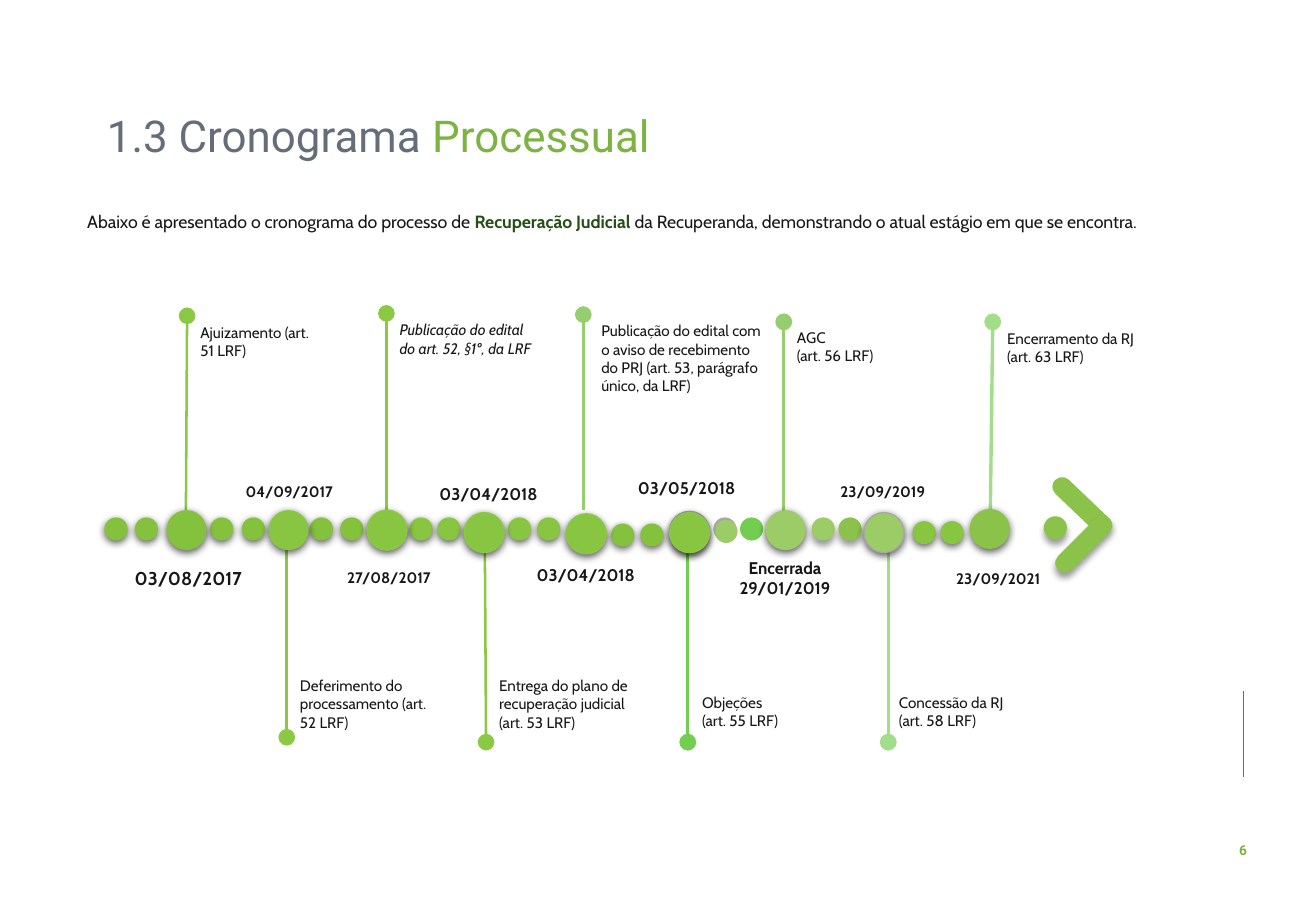
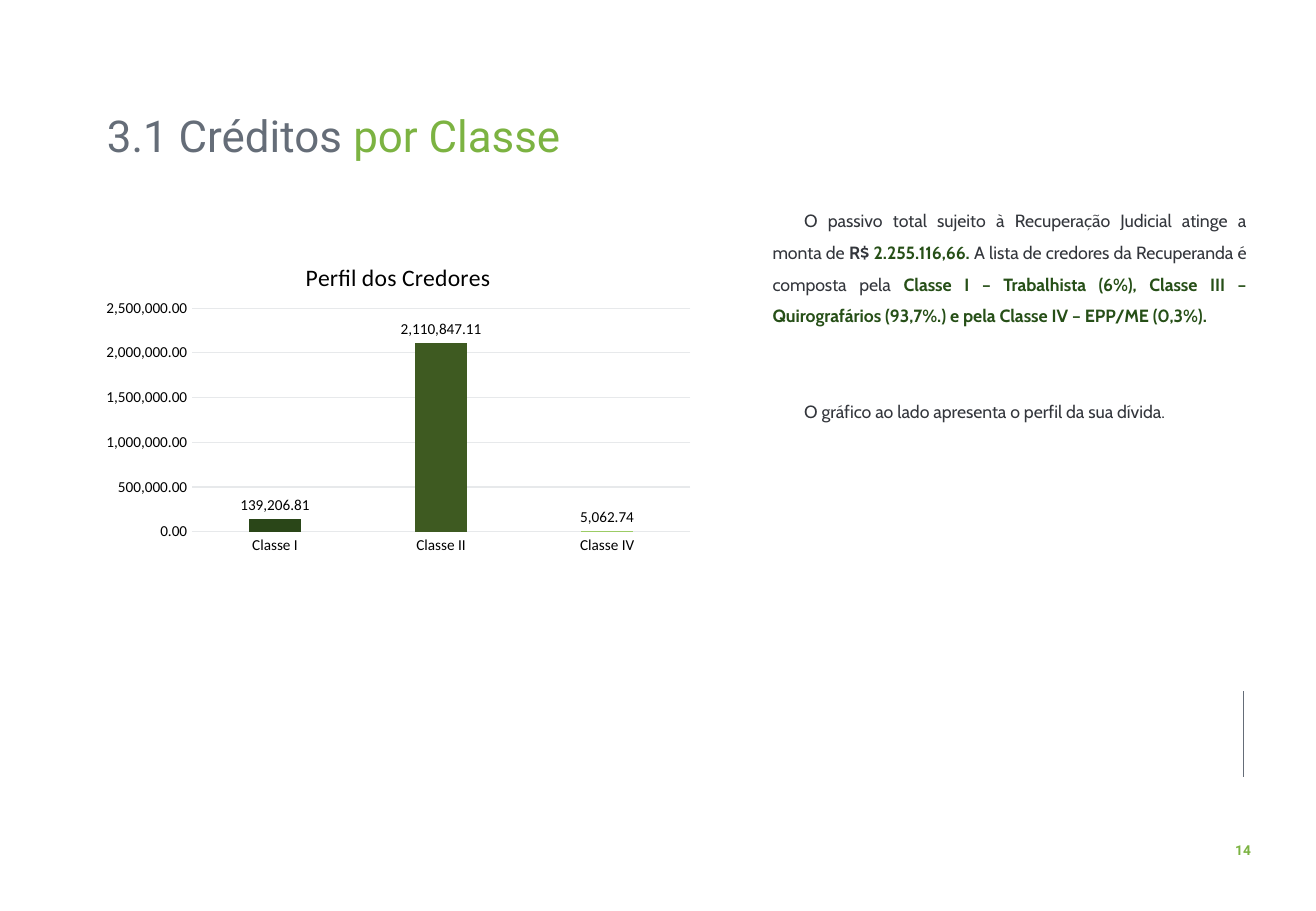
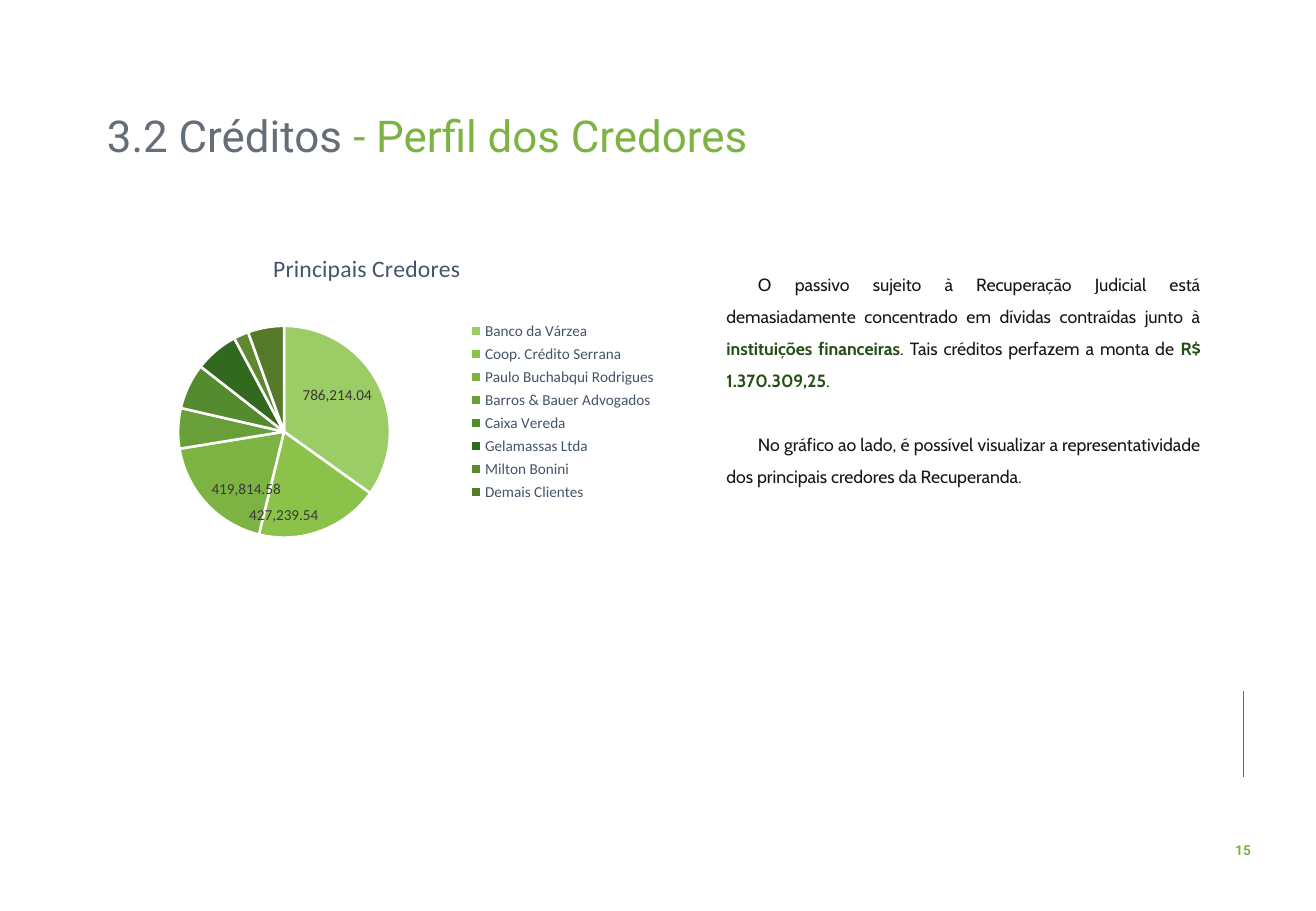
from dataclasses import dataclass

from lxml.etree import SubElement
from pptx import Presentation
from pptx.chart.data import CategoryChartData
from pptx.dml.color import RGBColor
from pptx.enum.chart import XL_CHART_TYPE, XL_LABEL_POSITION, XL_LEGEND_POSITION, XL_TICK_MARK
from pptx.enum.shapes import MSO_CONNECTOR, MSO_SHAPE
from pptx.enum.text import MSO_ANCHOR, MSO_AUTO_SIZE, PP_ALIGN
from pptx.oxml import parse_xml
from pptx.oxml.ns import nsdecls, qn
from pptx.util import Emu, Pt

PX = 9144  # 100 px to the inch


@dataclass(frozen=True)
class Theme:
    # colours
    slate: str = "656D78"
    green: str = "7CB342"
    forest: str = "264F17"
    ink: str = "181717"
    graphite: str = "33363C"
    grid: str = "E7E9EB"
    grey: str = "A7A7A7"
    leaf: str = "84C23D"
    lime: str = "88C641"
    rim: str = "8BC944"
    apple: str = "8BC34A"
    pale: str = "9CCC65"
    mint: str = "A2DE8A"
    sage: str = "95CE6E"
    emerald: str = "73CD50"
    legend: str = "44546A"
    label: str = "3B3838"
    black: str = "000000"
    white: str = "FFFFFF"
    # fonts
    title_font: str = "Roboto"
    body_font: str = "Cabin"
    chart_font: str = "Calibri"
    # type sizes
    title: float = 26
    chart_title: float = 14
    body: float = 10.5
    small: float = 9
    page: float = 8.1


T = Theme()
HARD = (63, 4.5, 1.5)  # shadow: opacity %, blur pt, distance pt
SOFT = (40, 4, 3)
BIG, SMALL = 33, 19  # dot diameters


def px(n):
    return Emu(n * PX)


def rgb(color):
    return RGBColor.from_string(color)


# ---------- text ----------
def style_font(font, size, color, name, bold=False, italic=False):
    font.size, font.name, font.bold, font.italic = Pt(size), name, bold, italic
    font.color.rgb = rgb(color)


def write(tf, paragraphs, size=T.small, color=T.ink, font=T.body_font, bold=False, italic=False,
          align=PP_ALIGN.LEFT, anchor=MSO_ANCHOR.TOP, wrap=True, spacing=None, indent=0, gap=0):
    """Each paragraph is a list of runs; a run is a string or (string, changes)."""
    tf.word_wrap, tf.vertical_anchor, tf.auto_size = wrap, anchor, MSO_AUTO_SIZE.NONE
    base = dict(size=size, color=color, name=font, bold=bold, italic=italic)
    for i, runs in enumerate(paragraphs):
        p = tf.add_paragraph() if i else tf.paragraphs[0]
        p.alignment = align
        p.space_before = Pt(gap if i else 0)
        if spacing:
            p.line_spacing = spacing
        if indent:
            p._p.get_or_add_pPr().set("indent", str(px(indent)))
        for run in runs:
            text, changes = (run, {}) if isinstance(run, str) else run
            r = p.add_run()
            r.text = text
            style_font(r.font, **{**base, **changes})


def textbox(s, box, paragraphs, **fmt):
    sp = s.shapes.add_textbox(*map(px, box))
    write(sp.text_frame, paragraphs, **fmt)


# ---------- shapes ----------
def add_shadow(sp, opacity, blur, distance):
    sp._element.spPr.append(parse_xml(
        f'<a:effectLst {nsdecls("a")}><a:outerShdw blurRad="{Pt(blur)}" dist="{Pt(distance)}" '
        f'dir="5400000" algn="t" rotWithShape="0"><a:srgbClr val="000000">'
        f'<a:alpha val="{opacity * 1000}"/></a:srgbClr></a:outerShdw></a:effectLst>'))


def shape(s, kind, box, fill, shadow=None, rim=None, rotation=0):
    sp = s.shapes.add_shape(kind, *map(px, box))
    sp.fill.solid()
    sp.fill.fore_color.rgb = rgb(fill)
    sp.rotation = rotation
    if rim:
        sp.line.color.rgb = rgb(rim)
        sp.line.width = Pt(0.75)
    else:
        sp.line.fill.background()
    if shadow:
        add_shadow(sp, *shadow)
    else:
        sp.shadow.inherit = False
    return sp


def dot(s, x, y, size, fill, shadow=HARD, rim=None):
    shape(s, MSO_SHAPE.OVAL, (x, y, size, size), fill, shadow, rim)


def line(s, ends, color, width, pin=False):
    c = s.shapes.add_connector(MSO_CONNECTOR.STRAIGHT, *map(px, ends))
    c.line.color.rgb = rgb(color)
    c.line.width = Pt(width)
    if pin:
        SubElement(c.line._get_or_add_ln(), qn("a:tailEnd"), type="oval", w="lg", len="lg")
    SubElement(c._element.spPr, qn("a:effectLst"))


# ---------- shared slide frame ----------
def new_slide(prs, lead, accent, page):
    s = prs.slides.add_slide(prs.slide_layouts[5])
    title = s.shapes.title
    title.left, title.top, title.width, title.height = map(px, (78, 87, 818, 53))
    write(title.text_frame, [[lead, (accent, dict(color=T.green))]], size=T.title, color=T.slate,
          font=T.title_font, anchor=MSO_ANCHOR.MIDDLE, spacing=0.9)
    line(s, (1023, 569, 1023, 640), T.slate, 0.5)
    textbox(s, (1006, 688, 34, 24), [[str(page)]], size=T.page, color=T.green,
            font=T.title_font, bold=True, align=PP_ALIGN.CENTER, wrap=False)
    return s


# ---------- charts ----------
def place(element, index, x, y, w=None, h=None):
    """Give a chart part a fixed place, in fractions of the chart."""
    for old in element.findall(qn("c:layout")):
        element.remove(old)
    layout = element.makeelement(qn("c:layout"))
    element.insert(index, layout)
    manual = SubElement(layout, qn("c:manualLayout"))
    values = [("xMode", "edge"), ("yMode", "edge"), ("x", x), ("y", y)]
    if w:
        values += [("w", w), ("h", h)]
    if index == 0:
        values.insert(0, ("layoutTarget", "inner"))
    for tag, value in values:
        SubElement(manual, qn(f"c:{tag}"), val=str(value))


def add_chart(s, kind, box, title, title_color, title_at, plot_at, data, colors, label_color):
    cd = CategoryChartData(number_format="#,##0.00")
    cd.categories = [name for name, _ in data]
    cd.add_series("Series 1", [value for _, value in data])
    chart = s.shapes.add_chart(kind, *map(px, box), cd).chart
    chart.has_legend = False
    chart.font.name, chart.font.size = T.chart_font, Pt(10)
    chart.has_title = True
    write(chart.chart_title.text_frame, [[title]], size=T.chart_title, color=title_color,
          font=T.chart_font, align=PP_ALIGN.CENTER)
    chart.chart_title.include_in_layout = False
    place(chart._chartSpace.xpath(".//c:chart/c:title")[0], 1, *title_at)
    place(chart._chartSpace.xpath(".//c:plotArea")[0], 0, *plot_at)

    plot = chart.plots[0]
    plot.vary_by_categories = kind == XL_CHART_TYPE.PIE
    plot.has_data_labels = True
    labels = plot.data_labels
    labels.show_value = True
    labels.number_format, labels.number_format_is_linked = "#,##0.00", False
    labels.position = XL_LABEL_POSITION.OUTSIDE_END
    style_font(labels.font, T.small, label_color, T.chart_font)
    for i, color in enumerate(colors):
        fill = plot.series[0].points[i].format.fill
        fill.solid()
        fill.fore_color.rgb = rgb(color)
    return chart


# ---------- slides ----------
def timeline_slide(prs):
    s = new_slide(prs, "1.3 Cronograma ", "Processual", 6)
    textbox(s, (31, 166, 1017, 30), [[
        "Abaixo é apresentado o cronograma do processo de ",
        ("Recuperação Judicial ", dict(color=T.forest, bold=True)),
        "da Recuperanda, demonstrando o atual estágio em que se encontra."]],
        size=T.body, align=PP_ALIGN.JUSTIFY, spacing=1.14, indent=31)

    # stems, from the time axis to the pin
    for ends, color, width in [
        ((153, 420, 154, 260), T.rim, 1.5), ((236, 447, 236, 607), T.rim, 1.5),
        ((318, 433, 318, 258), T.rim, 1.5), ((399, 445, 400, 611), T.rim, 1.5),
        ((480, 420, 480, 259), T.sage, 1.5), ((566, 449, 566, 611), T.emerald, 2),
        ((645, 422, 645, 265), T.sage, 2), ((731, 450, 731, 611), T.mint, 2),
        ((815, 421, 817, 265), T.mint, 2),
    ]:
        line(s, ends, color, width, pin=True)

    # small dots
    for y, fill, shadow, xs in [
        (426, T.leaf, HARD, (86, 111, 173, 199, 255, 280)),
        (426, T.lime, HARD, (337, 360, 418, 442)),
        (431, T.leaf, HARD, (503, 527)),
        (426, T.grey, None, (587,)), (428, T.pale, None, (588,)),
        (426, T.emerald, None, (609,)),
        (426, T.pale, SOFT, (668,)), (426, T.apple, SOFT, (690,)),
        (429, T.lime, HARD, (751, 774)), (425, T.apple, SOFT, (859,)),
    ]:
        for x in xs:
            dot(s, x, y, SMALL, fill, shadow)

    # milestone dots
    dot(s, 551, 421, BIG, T.grey, SOFT, T.grey)
    for x, y, fill, rim in [
        (137, 420, T.leaf, None), (221, 420, T.lime, None), (302, 420, T.lime, T.rim),
        (382, 422, T.lime, T.rim), (466, 423, T.lime, T.rim), (551, 422, T.lime, T.rim),
        (630, 420, T.pale, None), (711, 422, T.pale, T.grey), (798, 419, T.apple, None),
    ]:
        dot(s, x, y, BIG, fill, HARD, rim)

    # arrowhead of the time axis
    for x, y, rotation, shadow in [(860, 408, 43.7, None), (862, 440, 315, SOFT)]:
        bar = shape(s, MSO_SHAPE.ROUNDED_RECTANGLE, (x, y, 60, 16), T.apple, shadow,
                    rotation=rotation)
        bar.adjustments[0] = 0.5

    # event labels above the axis, then below it
    for box, texts, italic in [
        ((155, 261, 111, 40), ["Ajuizamento (art. 51 LRF)"], False),
        ((319, 259, 130, 40), ["Publicação do edital do art. 52, §1º, da LRF"], True),
        ((485, 260, 156, 71), ["Publicação do edital com o aviso de recebimento do PRJ "
                               "(art. 53, parágrafo único, da LRF)"], False),
        ((646, 265, 110, 40), ["AGC", "(art. 56 LRF)"], False),
        ((819, 266, 158, 40), ["Encerramento da RJ", "(art. 63 LRF)"], False),
    ]:
        textbox(s, box, [[t] for t in texts], italic=italic)
    for box, texts in [
        ((237, 551, 137, 56), ["Deferimento do processamento (art. 52 LRF)"]),
        ((401, 551, 140, 56), ["Entrega do plano de recuperação judicial (art. 53 LRF)"]),
        ((568, 566, 110, 40), ["Objeções", "(art. 55 LRF)"]),
        ((730, 566, 133, 40), ["Concessão da RJ", "(art. 58 LRF)"]),
    ]:
        textbox(s, box, [[t] for t in texts], anchor=MSO_ANCHOR.BOTTOM)

    # dates
    for box, texts, size in [
        ((67, 462, 176, 29), ["03/08/2017"], 11), ((174, 392, 128, 25), ["04/09/2017"], 9),
        ((265, 463, 110, 25), ["27/08/2017"], 9), ((338, 393, 128, 27), ["03/04/2018"], 10),
        ((418, 460, 128, 27), ["03/04/2018"], 10), ((501, 388, 128, 27), ["03/05/2018"], 10),
        ((582, 454, 128, 44), ["Encerrada", "29/01/2019"], 10),
        ((668, 392, 117, 25), ["23/09/2019"], 9), ((763, 464, 117, 25), ["23/09/2021"], 9),
    ]:
        textbox(s, box, [[t] for t in texts], size=size, bold=True, align=PP_ALIGN.CENTER)


def commentary(s, box, paragraphs, color, gap):
    textbox(s, box, paragraphs, size=T.body, color=color, align=PP_ALIGN.JUSTIFY,
            spacing=1.5, indent=26, gap=gap)


def classes_slide(prs):
    s = new_slide(prs, "3.1 Créditos ", "por Classe", 14)
    strong = dict(color=T.forest, bold=True)
    commentary(s, (626, 159, 410, 193), [
        ["O passivo total sujeito à Recuperação Judicial atinge a monta de ",
         ("R$ ", dict(bold=True)), ("2.255.116,66. ", strong),
         "A lista de credores da Recuperanda é composta pela ",
         ("Classe I – Trabalhista (6%), Classe III – Quirografários (93,7%.) "
          "e pela Classe IV – EPP/ME (0,3%).", strong)],
        ["O gráfico ao lado apresenta o perfil da sua dívida."]], T.graphite, gap=38)

    data = [("Classe I", 139206.81), ("Classe II", 2110847.11), ("Classe IV", 5062.74)]
    chart = add_chart(s, XL_CHART_TYPE.COLUMN_CLUSTERED, (78, 195, 500, 267),
                      "Perfil dos Credores", T.black, (0.34, 0.06), (0.16, 0.22, 0.82, 0.69),
                      data, ["2A4618", "3E5A21", T.pale], T.black)
    chart.plots[0].gap_width, chart.plots[0].overlap = 219, -27
    cat, val = chart.category_axis, chart.value_axis
    for axis in (cat, val):
        axis.major_tick_mark = axis.minor_tick_mark = XL_TICK_MARK.NONE
        style_font(axis.tick_labels.font, T.small, T.black, T.chart_font)
    val.minimum_scale, val.maximum_scale, val.major_unit = 0, 2500000, 500000
    val.tick_labels.number_format, val.tick_labels.number_format_is_linked = "#,##0.00", False
    val.format.line.fill.background()
    val.has_major_gridlines = True
    for rule in (cat.format.line, val.major_gridlines.format.line):
        rule.color.rgb = rgb(T.grid)
        rule.width = Pt(0.75)


def creditors_slide(prs):
    s = new_slide(prs, "3.2 Créditos ", "- Perfil dos Credores", 15)
    strong = dict(color=T.forest, bold=True)
    commentary(s, (588, 212, 410, 193), [
        ["O passivo sujeito à Recuperação Judicial está demasiadamente concentrado em dívidas "
         "contraídas junto à ", ("instituições financeiras", strong),
         ". Tais créditos perfazem a monta de ", ("R$ 1.370.309,25", strong), "."],
        ["No gráfico ao lado, é possível visualizar a representatividade dos principais "
         "credores da Recuperanda."]], T.ink, gap=19)

    data = [("Banco da Várzea", 786214.04), ("Coop. Crédito Serrana", 427239.54),
            ("Paulo Buchabqui Rodrigues", 419814.58), ("Barros & Bauer Advogados", 139206.81),
            ("Caixa Vereda", 156855.67), ("Gelamassas Ltda", 150246.00),
            ("Milton Bonini", 51362.43), ("Demais Clientes", 124177.59)]
    colors = [T.pale, T.apple, T.green, "689F38", "558B2F", "33691E", "5F892E", "547928"]
    chart = add_chart(s, XL_CHART_TYPE.PIE, (52, 189, 498, 300), "Principais Credores",
                      T.legend, (0.34, 0.05), (0.19, 0.26, 0.35, 0.59), data, colors, T.label)
    points = chart.plots[0].series[0].points
    for i in range(len(data)):
        points[i].format.line.color.rgb = rgb(T.white)
        points[i].format.line.width = Pt(1.5)
    for i in range(3):  # the large slices hold their labels
        label = points[i].data_label
        style_font(label.font, T.small, T.label, T.chart_font)
        label.position = XL_LABEL_POSITION.INSIDE_END
    chart.has_legend = True
    chart.legend.position = XL_LEGEND_POSITION.RIGHT
    chart.legend.include_in_layout = False
    style_font(chart.legend.font, T.small, T.legend, T.chart_font)
    place(chart.legend._element, 1, 0.66, 0.24, 0.33, 0.52)


def main():
    prs = Presentation()
    prs.slide_width, prs.slide_height = px(1083), px(750)
    timeline_slide(prs)
    classes_slide(prs)
    creditors_slide(prs)
    prs.save("out.pptx")


if __name__ == "__main__":
    main()
